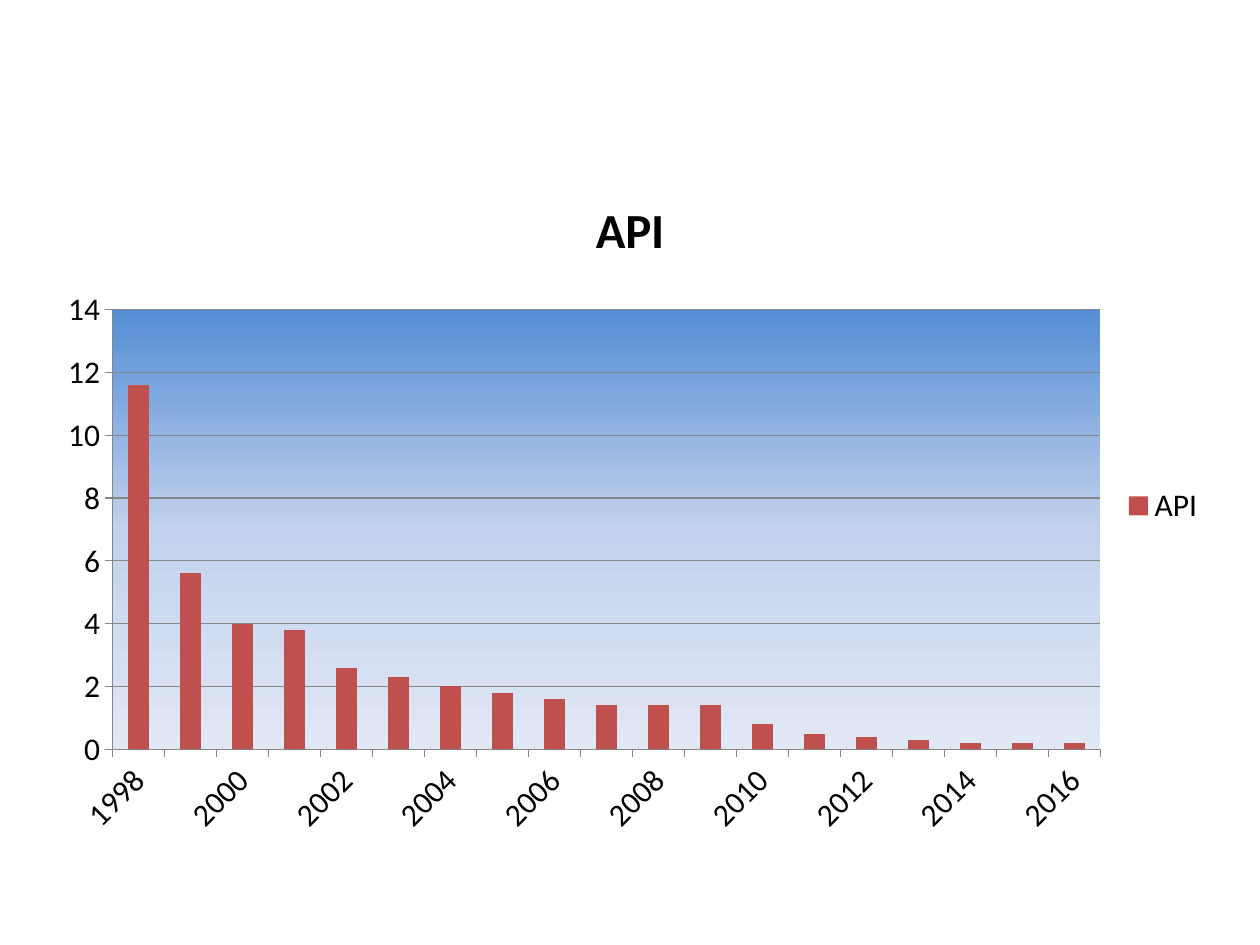
from lxml.etree import SubElement
from pptx import Presentation
from pptx.chart.data import CategoryChartData
from pptx.dml.color import RGBColor
from pptx.enum.chart import XL_CHART_TYPE, XL_LEGEND_POSITION, XL_TICK_MARK
from pptx.oxml import parse_xml
from pptx.oxml.ns import nsdecls, qn
from pptx.util import Inches, Pt

BLACK = RGBColor(0x00, 0x00, 0x00)
GRAY = RGBColor(0x86, 0x86, 0x86)
RED = RGBColor(0xC0, 0x50, 0x4D)
GRADIENT = [
    (0, RGBColor(0x55, 0x8E, 0xD5)),
    (50, RGBColor(0xC2, 0xD1, 0xED)),
    (100, RGBColor(0xE1, 0xE8, 0xF5)),
]
FONT = "Calibri"
YEARS = [str(year) for year in range(1998, 2017)]
API_VALUES = [11.6, 5.6, 4, 3.8, 2.6, 2.3, 2, 1.8, 1.6, 1.4,
              1.4, 1.4, 0.8, 0.5, 0.4, 0.3, 0.2, 0.2, 0.2]
PLOT_SHARES = {"x": 0.06, "y": 0.21, "w": 0.84, "h": 0.65}


def format_font(font, size, bold=False):
    font.name = FONT
    font.size = Pt(size)
    font.bold = bold
    font.color.rgb = BLACK


def add_api_chart(slide, width, height):
    data = CategoryChartData()
    data.categories = YEARS
    data.add_series("API", API_VALUES)
    frame = slide.shapes.add_chart(
        XL_CHART_TYPE.COLUMN_CLUSTERED,
        int(width / 30), Inches(1.33), int(width * 28 / 30), int(height * 0.716),
        data,
    )
    chart = frame.chart
    format_font(chart.font, 18)
    plot = chart.plots[0]
    plot.vary_by_categories = False
    plot.gap_width = 150
    fill = plot.series[0].format.fill
    fill.solid()
    fill.fore_color.rgb = RED
    return chart


def add_title_and_legend(chart):
    chart.has_title = True
    run = chart.chart_title.text_frame.paragraphs[0].add_run()
    run.text = "API"
    format_font(run.font, 28, bold=True)
    chart.chart_title.include_in_layout = False
    chart.has_legend = True
    chart.legend.position = XL_LEGEND_POSITION.RIGHT
    chart.legend.include_in_layout = False


def format_axis(axis):
    axis.major_tick_mark = XL_TICK_MARK.OUTSIDE
    axis.minor_tick_mark = XL_TICK_MARK.NONE
    axis.format.line.color.rgb = GRAY
    axis.format.line.width = Pt(0.75)
    format_font(axis.tick_labels.font, 18)


def format_axes(chart):
    years, values = chart.category_axis, chart.value_axis
    for axis in (years, values):
        format_axis(axis)
    text_properties = years._element.find(qn("c:txPr")).find(qn("a:bodyPr"))
    text_properties.set("rot", str(-45 * 60000))
    text_properties.set("vert", "horz")
    values.minimum_scale, values.maximum_scale, values.major_unit = 0, 14, 2
    values.has_major_gridlines = True
    values.major_gridlines.format.line.color.rgb = GRAY
    values.major_gridlines.format.line.width = Pt(0.75)


def format_plot_area(chart):
    """Place the plot area by shares of the chart and fill it with a gradient."""
    plot_area = chart._chartSpace.find(".//" + qn("c:plotArea"))
    for old_layout in plot_area.findall(qn("c:layout")):
        plot_area.remove(old_layout)
    layout = parse_xml(f"<c:layout {nsdecls('c')}><c:manualLayout/></c:layout>")
    manual = layout[0]
    settings = {"layoutTarget": "inner", "xMode": "edge", "yMode": "edge", **PLOT_SHARES}
    for name, value in settings.items():
        SubElement(manual, qn(f"c:{name}")).set("val", str(value))
    plot_area.insert(0, layout)

    stops = "".join(
        f'<a:gs pos="{share * 1000}"><a:srgbClr val="{color}"/></a:gs>'
        for share, color in GRADIENT
    )
    plot_area.append(parse_xml(
        f"<c:spPr {nsdecls('c', 'a')}><a:gradFill><a:gsLst>{stops}</a:gsLst>"
        f'<a:lin ang="{90 * 60000}" scaled="0"/></a:gradFill></c:spPr>'
    ))


def main():
    presentation = Presentation()
    presentation.slide_width = Inches(10)
    presentation.slide_height = Inches(7.5)
    slide = presentation.slides.add_slide(presentation.slide_layouts[6])
    chart = add_api_chart(slide, presentation.slide_width, presentation.slide_height)
    add_title_and_legend(chart)
    format_axes(chart)
    format_plot_area(chart)
    presentation.save("out.pptx")


if __name__ == "__main__":
    main()
